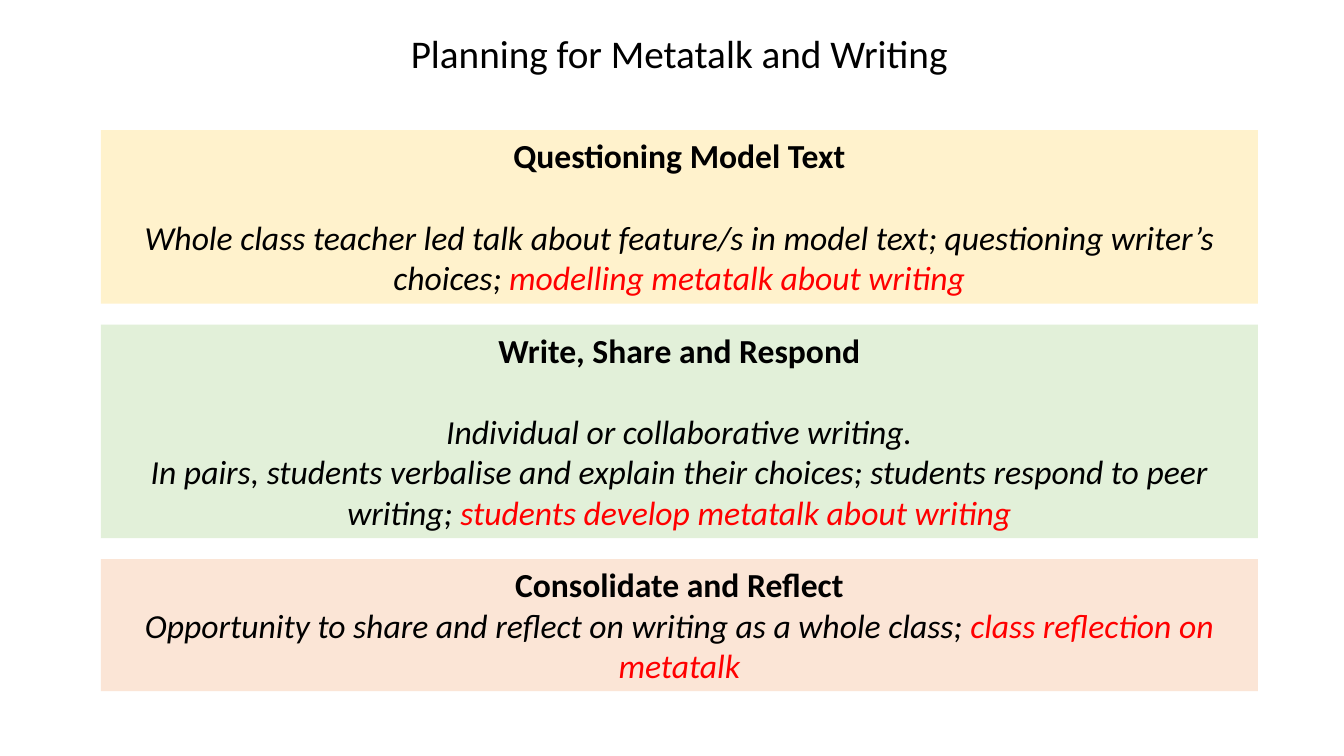
from pptx import Presentation
from pptx.dml.color import RGBColor
from pptx.enum.shapes import MSO_SHAPE as Shape
from pptx.enum.text import MSO_ANCHOR as Anchor, MSO_AUTO_SIZE as AutoSize, PP_ALIGN as Align
from pptx.util import Cm, Pt

COLORS = {
    "text": "000000",
    "metatalk": "FF0000",
    "question": "FFF2CC",
    "write": "E2F0D9",
    "reflect": "FBE5D6",
}
TITLE = {"size": Pt(28), "bold": False, "italic": False}
HEADING = {"size": Pt(24), "bold": True, "italic": False}
BODY = {"size": Pt(24), "bold": False, "italic": True}
FRAME = {"word_wrap": True, "vertical_anchor": Anchor.TOP, "auto_size": AutoSize.SHAPE_TO_FIT_TEXT}
HEADING_GAP = Pt(29.3)
LEFT, TOP, WIDTH, GAP = 2.54, 3.28, 29.16, 0.53

STAGES = [
    ("question", 4.37, HEADING_GAP, "Questioning Model Text", [
        [("Whole class teacher led talk about feature/s in model text; "
          "questioning writer’s choices; ", "text"),
         ("modelling metatalk about writing", "metatalk")],
    ]),
    ("write", 5.38, HEADING_GAP, "Write, Share and Respond", [
        [("Individual or collaborative writing.", "text")],
        [("In pairs, students verbalise and explain their choices; "
          "students respond to peer writing; ", "text"),
         ("students develop metatalk about writing", "metatalk")],
    ]),
    ("reflect", 3.33, Pt(0), "Consolidate and Reflect", [
        [("Opportunity to share and reflect on writing as a whole class; ", "text"),
         ("class reflection on metatalk", "metatalk")],
    ]),
]


def set_all(target, values):
    """Set every attribute named in values on the target."""
    for name, value in values.items():
        setattr(target, name, value)


def rgb(name):
    """Return the named colour."""
    return RGBColor.from_string(COLORS[name])


def write_paragraph(paragraph, runs, font_values, space_after=Pt(0)):
    """Fill a centred paragraph with coloured runs."""
    set_all(paragraph, {"alignment": Align.CENTER, "space_before": Pt(0), "space_after": space_after})
    for text, color in runs:
        run = paragraph.add_run()
        run.text = text
        set_all(run.font, {"name": "Calibri", **font_values})
        run.font.color.rgb = rgb(color)


def add_title(slide, text):
    """Place and format the title placeholder."""
    title = slide.shapes.title
    set_all(title, {"left": Cm(7.92), "top": Cm(0.61), "width": Cm(18.39), "height": Cm(1.45)})
    set_all(title.text_frame, FRAME)
    write_paragraph(title.text_frame.paragraphs[0], [(text, "text")], TITLE)


def add_stage(slide, top, color, height, heading_gap, heading, body):
    """Add one lesson stage as a filled panel with heading and body."""
    panel = slide.shapes.add_shape(Shape.RECTANGLE, Cm(LEFT), Cm(top), Cm(WIDTH), Cm(height))
    panel.shadow.inherit = False
    panel.fill.solid()
    panel.fill.fore_color.rgb = rgb(color)
    panel.line.fill.background()
    frame = panel.text_frame
    set_all(frame, FRAME)
    write_paragraph(frame.paragraphs[0], [(heading, "text")], HEADING, heading_gap)
    for runs in body:
        write_paragraph(frame.add_paragraph(), runs, BODY)


def main():
    """Build and save the slide."""
    presentation = Presentation()
    set_all(presentation, {"slide_width": Cm(33.87), "slide_height": Cm(19.05)})
    slide = presentation.slides.add_slide(presentation.slide_layouts[5])
    add_title(slide, "Planning for Metatalk and Writing")
    top = TOP
    for color, height, heading_gap, heading, body in STAGES:
        add_stage(slide, top, color, height, heading_gap, heading, body)
        top += height + GAP
    presentation.save("out.pptx")


if __name__ == "__main__":
    main()
